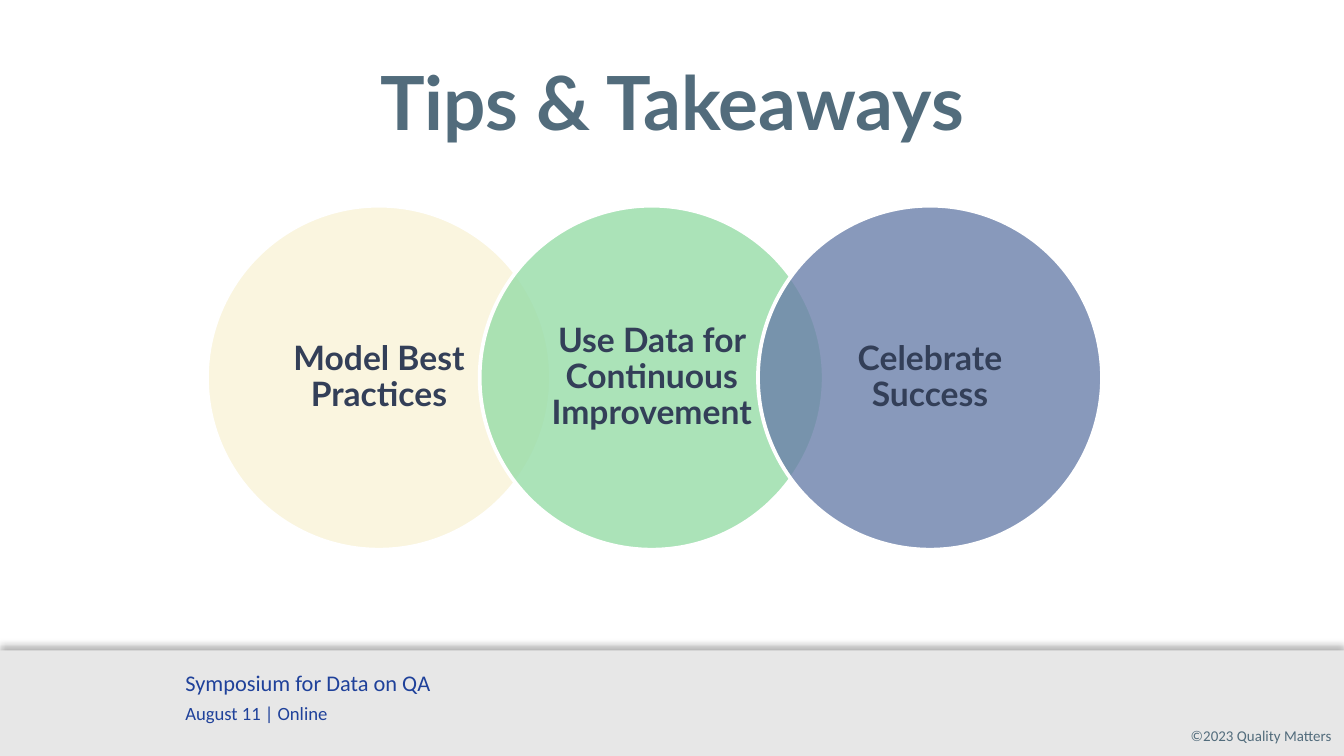
from lxml import etree
from pptx import Presentation
from pptx.dml.color import RGBColor
from pptx.enum import shapes, text
from pptx.oxml.ns import qn
from pptx.util import Pt

TITLE = "Tips & Takeaways"
TIPS = [  # label, left edge, fill
    ("Model Best Practices", 110.9, "F9F3D7"),
    ("Use Data for Continuous Improvement", 257, "96DCA7"),
    ("Celebrate Success", 406.1, "6B80AA"),
]
EVENT = [("Symposium for Data on QA", 12), ("August 11 | Online", 10)]
RIGHTS = "©2023 Quality Matters"

THEME = {
    "head": "Lato", "body": "Calibri",
    "slate": "526C7C", "navy": "333F58", "blue": "1F419A",
    "band": "E7E7E7", "white": "FFFFFF",
    "title": 40, "tip": 18, "small": 8,
}
WIDE, HIGH = 720, 405
BAND = 348.5
TOP, SIZE = 110.2, 184.3
INNER = SIZE / 2 ** 0.5  # square inscribed in a circle
ALIGN = text.PP_ALIGN


def rgb(code):
    return RGBColor.from_string(code)


def add_text(slide, box, lines, face, color, bold=False, align=ALIGN.LEFT,
             anchor=text.MSO_ANCHOR.TOP, pad=(7.2, 3.6, 7.2, 3.6), lead=None):
    """Add a text box; lines holds (wording, type size) pairs."""
    frame = slide.shapes.add_textbox(*map(Pt, box)).text_frame
    frame.word_wrap = True
    frame.vertical_anchor = anchor
    (frame.margin_left, frame.margin_top,
     frame.margin_right, frame.margin_bottom) = map(Pt, pad)
    for i, (words, size) in enumerate(lines):
        para = frame.add_paragraph() if i else frame.paragraphs[0]
        para.text = words
        para.alignment = align
        if i:
            para.space_before = Pt(3)
        if lead:
            para.line_spacing = lead
        font = para.font
        font.name, font.size, font.bold = face, Pt(size), bold
        font.color.rgb = rgb(color)


def add_solid(slide, kind, box, color):
    shape = slide.shapes.add_shape(kind, *map(Pt, box))
    shape.shadow.inherit = False
    shape.fill.solid()
    shape.fill.fore_color.rgb = rgb(color)
    shape.line.fill.background()
    return shape


def set_alpha(color, part):
    etree.SubElement(color, qn("a:alpha"), val=str(part * 1000))


def add_band(slide):
    band = add_solid(slide, shapes.MSO_SHAPE.RECTANGLE,
                     (0, BAND, WIDE, HIGH - BAND), THEME["band"])
    effects = band.element.spPr.find(qn("a:effectLst"))
    shade = etree.SubElement(
        effects, qn("a:outerShdw"), blurRad=str(Pt(4)), dist=str(Pt(3)),
        dir="16200000", algn="b", rotWithShape="0")
    set_alpha(etree.SubElement(shade, qn("a:srgbClr"), val="000000"), 29)


def add_tip(slide, label, left, color):
    disc = add_solid(slide, shapes.MSO_SHAPE.OVAL,
                     (left, TOP, SIZE, SIZE), color)
    fill = disc.element.spPr.find(qn("a:solidFill"))
    set_alpha(fill.find(qn("a:srgbClr")), 80)
    disc.line.color.rgb = rgb(THEME["white"])
    disc.line.width = Pt(2)
    gap = (SIZE - INNER) / 2
    add_text(slide, (left + gap, TOP + gap, INNER, INNER),
             [(label, THEME["tip"])], THEME["head"], THEME["navy"], True,
             ALIGN.CENTER, text.MSO_ANCHOR.MIDDLE, (10, 2, 10, 2), 0.9)


def main():
    deck = Presentation()
    deck.slide_width, deck.slide_height = Pt(WIDE), Pt(HIGH)
    slide = deck.slides.add_slide(deck.slide_layouts[6])
    add_band(slide)
    add_text(slide, (599, 385.9, 114.5, 17.3), [(RIGHTS, THEME["small"])],
             THEME["body"], THEME["slate"], align=ALIGN.RIGHT,
             pad=(7.2, 3.6, 0, 3.6))
    add_text(slide, (92.2, 355, 460, 36.7), EVENT,
             THEME["body"], THEME["blue"])
    add_text(slide, (0, 25.2, WIDE, 57.6), [(TITLE, THEME["title"])],
             THEME["head"], THEME["slate"], True, ALIGN.CENTER,
             text.MSO_ANCHOR.MIDDLE)
    for tip in TIPS:
        add_tip(slide, *tip)
    deck.save("out.pptx")


if __name__ == "__main__":
    main()
